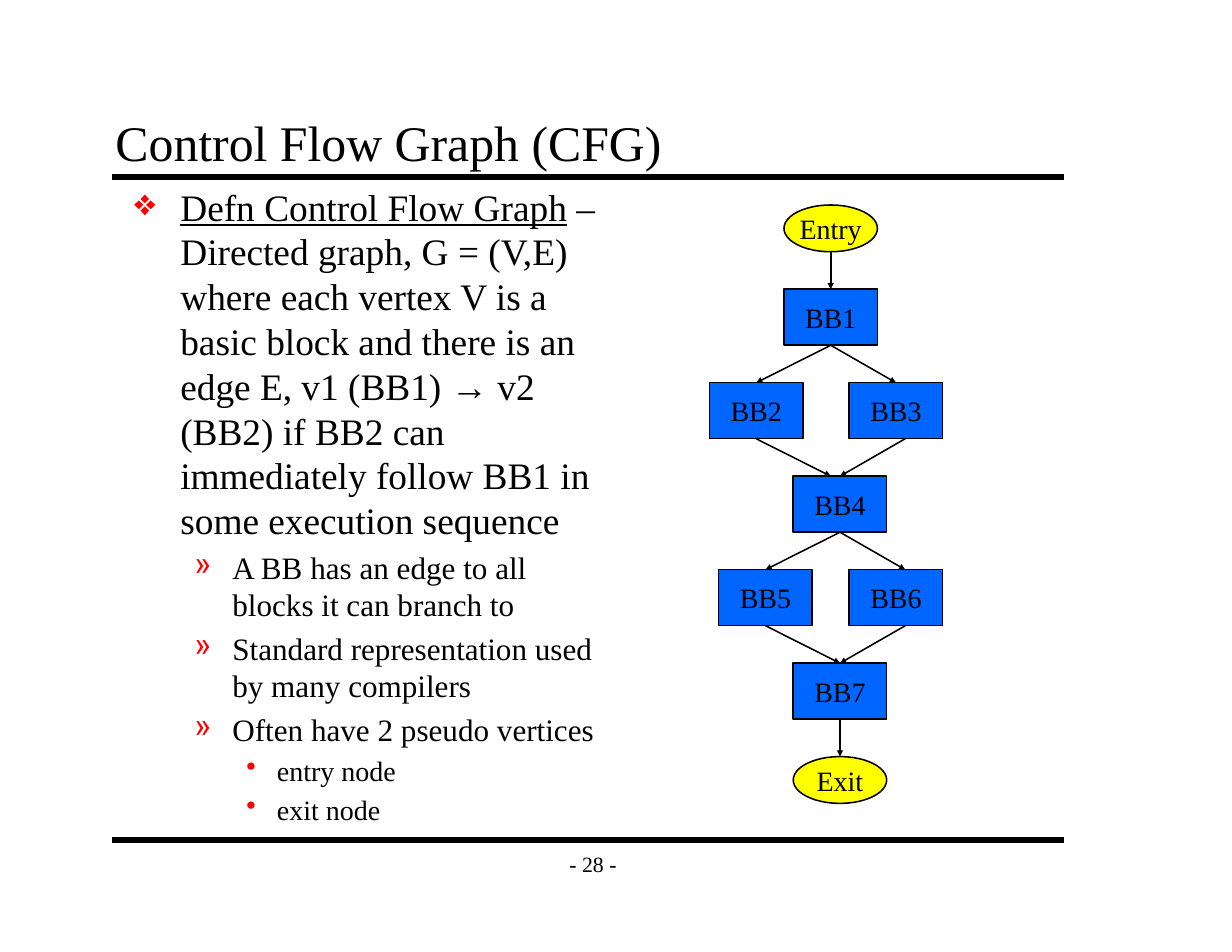
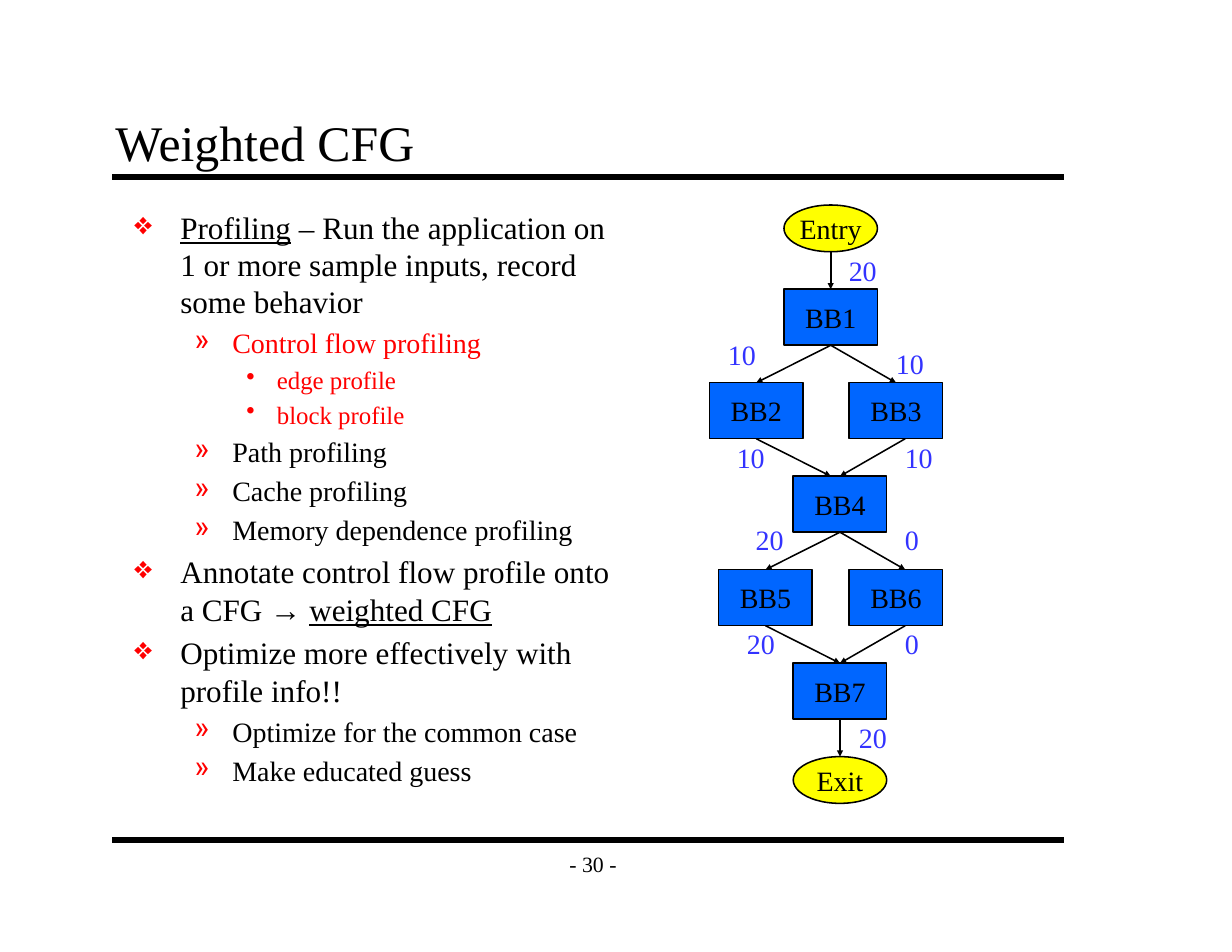
"""Build two slides on control flow graphs: the plain graph and the weighted one."""
from dataclasses import dataclass

from lxml.etree import SubElement
from pptx import Presentation
from pptx.dml.color import RGBColor
from pptx.enum.shapes import MSO_CONNECTOR, MSO_SHAPE
from pptx.enum.text import MSO_ANCHOR, PP_ALIGN
from pptx.oxml.ns import qn
from pptx.util import Cm, Pt

STRAIGHT = MSO_CONNECTOR.STRAIGHT
RECTANGLE, OVAL = MSO_SHAPE.RECTANGLE, MSO_SHAPE.OVAL
TOP, MIDDLE, BOTTOM = MSO_ANCHOR.TOP, MSO_ANCHOR.MIDDLE, MSO_ANCHOR.BOTTOM
LEFT, CENTER = PP_ALIGN.LEFT, PP_ALIGN.CENTER

FONT = "Times New Roman"
BLACK, RED, BLUE, YELLOW, WEIGHT_BLUE = "000000", "FF0000", "0066FF", "FFFF00", "3333FF"
TOP_SIDE, BOTTOM_SIDE = 0, 2

NODE_WIDTH, BLOCK_HEIGHT, OVAL_HEIGHT = 2.12, 1.27, 1.06
FIRST_BLOCK_TOP, ROW_GAP = 6.56, 0.85
ROW_PITCH = BLOCK_HEIGHT + ROW_GAP
RULE_LEFT, RULE_RIGHT, RULE_TOPS = 2.54, 24.13, (4.02, 19.05)


@dataclass(frozen=True)
class Level:
    """Bullet style of one outline level, with lengths in centimetres."""
    bullet: str
    indent: float
    hanging: float


@dataclass(frozen=True)
class Point:
    """One outline paragraph and the phrase underlined in it."""
    level: int
    text: str
    underlined: str = ""
    color: str = BLACK


@dataclass(frozen=True)
class Node:
    """A graph vertex: its middle in centimetres and its row."""
    name: str
    center: float
    row: int
    pseudo: bool = False

    @property
    def height(self) -> float:
        """Return the height of the vertex."""
        return OVAL_HEIGHT if self.pseudo else BLOCK_HEIGHT

    @property
    def top(self) -> float:
        """Return the top of the vertex."""
        if self.row < 0:
            return FIRST_BLOCK_TOP - ROW_GAP - OVAL_HEIGHT
        return FIRST_BLOCK_TOP + self.row * ROW_PITCH


@dataclass(frozen=True)
class Edge:
    """A graph edge, its weight with place, and shifts of its ends."""
    source: str
    target: str
    weight: str
    weight_left: float
    weight_top: float
    start_shift: float = 0
    end_shift: float = 0


@dataclass(frozen=True)
class Lesson:
    """The content of one slide."""
    title: str
    page: int
    outline_top: float
    outline_width: float
    sizes: tuple[int, ...]
    points: tuple[Point, ...]
    weighted: bool


LEVELS = (
    Level("❖", 1.06, 1.04),
    Level("»", 2.24, 0.86),
    Level("•", 3.25, 0.69),
)

NODES = (
    Node("Entry", 18.84, -1, True),
    Node("BB1", 18.84, 0),
    Node("BB2", 17.15, 1),
    Node("BB3", 20.32, 1),
    Node("BB4", 19.05, 2),
    Node("BB5", 17.36, 3),
    Node("BB6", 20.32, 3),
    Node("BB7", 19.05, 4),
    Node("Exit", 19.05, 5, True),
)

EDGES = (
    Edge("Entry", "BB1", "20", 19.0, 5.61),
    Edge("BB1", "BB2", "10", 16.26, 7.52),
    Edge("BB1", "BB3", "10", 20.07, 7.72),
    Edge("BB2", "BB4", "10", 16.46, 9.86, end_shift=-0.21),
    Edge("BB3", "BB4", "10", 20.27, 9.86, start_shift=0.21),
    Edge("BB4", "BB5", "20", 16.89, 11.73),
    Edge("BB4", "BB6", "0", 20.27, 11.73, end_shift=0.21),
    Edge("BB5", "BB7", "20", 16.69, 14.07),
    Edge("BB6", "BB7", "0", 20.27, 14.07, start_shift=0.21),
    Edge("BB7", "Exit", "20", 19.23, 16.21),
)

LESSONS = (
    Lesson("Control Flow Graph (CFG)", 28, 4.02, 11.23, (24, 20, 18), (
        Point(0, "Defn Control Flow Graph – Directed graph, G = (V,E) where each vertex V "
                 "is a basic block and there is an edge E, v1 (BB1) → v2 (BB2) if BB2 can "
                 "immediately follow BB1 in some execution sequence",
              "Defn Control Flow Graph"),
        Point(1, "A BB has an edge to all blocks it can branch to"),
        Point(1, "Standard representation used by many compilers"),
        Point(1, "Often have 2 pseudo vertices"),
        Point(2, "entry node"),
        Point(2, "exit node"),
    ), False),
    Lesson("Weighted CFG", 30, 4.57, 11.63, (20, 18, 16), (
        Point(0, "Profiling – Run the application on 1 or more sample inputs, "
                 "record some behavior", "Profiling"),
        Point(1, "Control flow profiling", color=RED),
        Point(2, "edge profile", color=RED),
        Point(2, "block profile", color=RED),
        Point(1, "Path profiling"),
        Point(1, "Cache profiling"),
        Point(1, "Memory dependence profiling"),
        Point(0, "Annotate control flow profile onto a CFG → weighted CFG", "weighted CFG"),
        Point(0, "Optimize more effectively with profile info!!"),
        Point(1, "Optimize for the common case"),
        Point(1, "Make educated guess"),
    ), True),
)


def rgb(value: str) -> RGBColor:
    """Return the colour for a hex string."""
    return RGBColor.from_string(value)


def style_font(paragraph, size: int, color: str) -> None:
    """Set the font of a whole paragraph."""
    paragraph.font.name = FONT
    paragraph.font.size = Pt(size)
    paragraph.font.color.rgb = rgb(color)


def add_text(slide, box: tuple[float, ...], text: str, size: int, color: str = BLACK,
             anchor=TOP, align=LEFT, wrap: bool = False, insets=(0.25, 0.13)) -> None:
    """Add a text box with one paragraph."""
    frame = slide.shapes.add_textbox(*map(Cm, box)).text_frame
    frame.word_wrap = wrap
    frame.vertical_anchor = anchor
    frame.margin_left = frame.margin_right = Cm(insets[0])
    frame.margin_top = frame.margin_bottom = Cm(insets[1])
    paragraph = frame.paragraphs[0]
    paragraph.text = text
    paragraph.alignment = align
    style_font(paragraph, size, color)


def add_line(slide, start: tuple[float, float], end: tuple[float, float], width: float):
    """Add a black straight line without a shadow."""
    line = slide.shapes.add_connector(STRAIGHT, *map(Cm, start + end))
    line.line.color.rgb = rgb(BLACK)
    line.line.width = Pt(width)
    SubElement(line.element.spPr, qn("a:effectLst"))
    return line


def add_frame(slide, lesson: Lesson) -> None:
    """Add the rules, page number and title."""
    for top in RULE_TOPS:
        add_line(slide, (RULE_LEFT, top), (RULE_RIGHT, top), 4)
    add_text(slide, (12.5, 19.05, 1.9, 1.06), f"- {lesson.page} -", 14,
             anchor=MIDDLE, align=CENTER, insets=(0.28, 0.15))
    add_text(slide, (2.34, 2.33, 21.59, 1.71), lesson.title, 32,
             anchor=BOTTOM, wrap=True, insets=(0.28, 0.15))


def add_bullet(paragraph, level: Level) -> None:
    """Give a paragraph the indent and bullet of its level."""
    properties = paragraph._p.get_or_add_pPr()
    properties.set("marL", str(Cm(level.indent)))
    properties.set("indent", str(-Cm(level.hanging)))
    color = SubElement(properties, qn("a:buClr"))
    SubElement(color, qn("a:srgbClr"), val=RED)
    SubElement(properties, qn("a:buSzPct"), val="100000")
    SubElement(properties, qn("a:buChar"), char=level.bullet)


def add_outline(slide, lesson: Lesson) -> None:
    """Add the bulleted text on the left."""
    box = slide.shapes.add_textbox(
        Cm(2.75), Cm(lesson.outline_top), Cm(lesson.outline_width), Cm(14.48))
    frame = box.text_frame
    frame.word_wrap = True
    frame.margin_left = frame.margin_right = Cm(0.28)
    frame.margin_top = frame.margin_bottom = Cm(0.15)
    for index, point in enumerate(lesson.points):
        paragraph = frame.add_paragraph() if index else frame.paragraphs[0]
        size = lesson.sizes[point.level]
        paragraph.space_before = Pt(0.2 * size)
        add_bullet(paragraph, LEVELS[point.level])
        style_font(paragraph, size, point.color)
        pieces = point.text.partition(point.underlined) if point.underlined else (point.text,)
        for piece in filter(None, pieces):
            run = paragraph.add_run()
            run.text = piece
            if piece == point.underlined:
                run.font.underline = True


def add_node(slide, node: Node):
    """Add a basic block or a pseudo vertex."""
    shape = slide.shapes.add_shape(
        OVAL if node.pseudo else RECTANGLE, Cm(node.center - NODE_WIDTH / 2), Cm(node.top),
        Cm(NODE_WIDTH), Cm(node.height))
    shape.shadow.inherit = False
    shape.fill.solid()
    shape.fill.fore_color.rgb = rgb(YELLOW if node.pseudo else BLUE)
    shape.line.color.rgb = rgb(BLACK)
    shape.line.width = Pt(1)
    frame = shape.text_frame
    frame.word_wrap = False
    frame.vertical_anchor = MIDDLE
    paragraph = frame.paragraphs[0]
    paragraph.text = node.name
    paragraph.alignment = CENTER
    style_font(paragraph, 18, BLACK)
    return shape


def add_edge(slide, edge: Edge, nodes: dict[str, Node], vertices: dict) -> None:
    """Add an arrow from the bottom of one vertex to the top of another."""
    source, target = nodes[edge.source], nodes[edge.target]
    arrow = add_line(slide, (source.center + edge.start_shift, source.top + source.height),
                     (target.center + edge.end_shift, target.top), 1)
    outline = arrow.element.spPr.find(qn("a:ln"))
    SubElement(outline, qn("a:tailEnd"), type="triangle", w="sm", len="sm")
    if not edge.start_shift and not source.pseudo:
        arrow.begin_connect(vertices[edge.source], BOTTOM_SIDE)
    if not edge.end_shift:
        arrow.end_connect(vertices[edge.target], TOP_SIDE)


def add_graph(slide, weighted: bool) -> None:
    """Add the control flow graph, with edge weights if asked."""
    nodes = {node.name: node for node in NODES}
    vertices = {node.name: add_node(slide, node) for node in NODES}
    for edge in EDGES:
        add_edge(slide, edge, nodes, vertices)
        if weighted:
            width = 0.53 + 0.31 * len(edge.weight)
            add_text(slide, (edge.weight_left, edge.weight_top, width, 1.02),
                     edge.weight, 18, WEIGHT_BLUE)


def main() -> None:
    """Build and save the presentation."""
    deck = Presentation()
    deck.slide_width, deck.slide_height = Cm(27.94), Cm(21.59)
    for lesson in LESSONS:
        slide = deck.slides.add_slide(deck.slide_layouts[6])
        add_frame(slide, lesson)
        add_outline(slide, lesson)
        add_graph(slide, lesson.weighted)
    deck.save("out.pptx")


if __name__ == "__main__":
    main()
